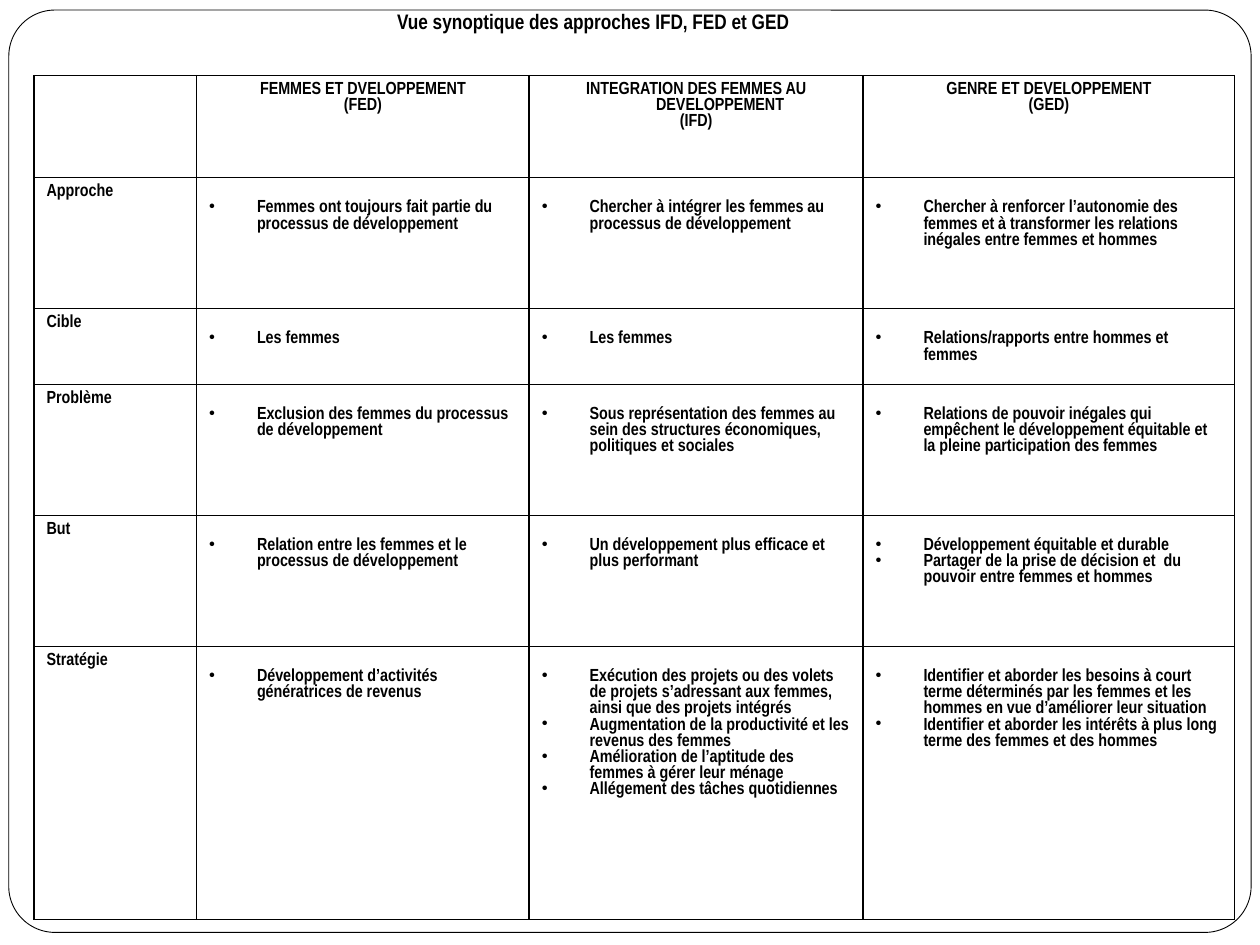
import pptx
import pptx.util
import pptx.dml.color
import pptx.enum.shapes
import pptx.enum.text
import pptx.oxml
import pptx.oxml.ns
import lxml.etree

Inches = pptx.util.Inches
Pt = pptx.util.Pt
BLACK = pptx.dml.color.RGBColor(0, 0, 0)
WHITE = pptx.dml.color.RGBColor(255, 255, 255)
FONT = "Arial Narrow"
HANGING = Inches(0.38)
COLUMN_WIDTHS = (1.29, 2.64, 2.65, 2.95)
ROW_HEIGHTS = (0.81, 1.04, 0.6, 1.04, 1.04, 2.17)

APPROACHES = [
    ["FEMMES ET DVELOPPEMENT", "(FED)"],
    ["INTEGRATION DES FEMMES AU DEVELOPPEMENT", "(IFD)"],
    ["GENRE ET DEVELOPPEMENT", "(GED)"],
]
CRITERIA = [
    ("Approche",
     ["Femmes ont toujours fait partie du processus de développement"],
     ["Chercher à intégrer les femmes au processus de développement"],
     ["Chercher à renforcer l’autonomie des femmes et à transformer les "
      "relations inégales entre femmes et hommes"]),
    ("Cible",
     ["Les femmes"],
     ["Les femmes"],
     ["Relations/rapports entre hommes et femmes"]),
    ("Problème",
     ["Exclusion des femmes du processus de développement"],
     ["Sous représentation des femmes au sein des structures économiques,  "
      "politiques et sociales"],
     ["Relations de pouvoir inégales qui empêchent le développement "
      "équitable et la pleine participation des femmes"]),
    ("But",
     ["Relation entre les femmes et le processus de développement"],
     ["Un développement plus efficace et plus performant"],
     ["Développement équitable et durable",
      "Partager de la prise de décision et  du pouvoir entre femmes et hommes"]),
    ("Stratégie",
     ["Développement d’activités génératrices de revenus"],
     ["Exécution des projets ou des volets de projets s’adressant aux femmes, "
      "ainsi que des projets intégrés",
      "Augmentation de la productivité et les revenus des femmes",
      "Amélioration de l’aptitude des femmes à gérer leur ménage",
      "Allégement des tâches quotidiennes"],
     ["Identifier et aborder les besoins à court terme déterminés par les "
      "femmes et les hommes en vue d’améliorer leur situation",
      "Identifier et aborder les intérêts à plus long terme des femmes et "
      "des hommes"]),
]


def style_font(paragraph, size):
    font = paragraph.font
    font.name, font.size, font.bold = FONT, Pt(size), True
    font.color.rgb = BLACK


def add_frame(slide, left, top, width, height):
    frame = slide.shapes.add_shape(
        pptx.enum.shapes.MSO_SHAPE.ROUNDED_RECTANGLE, left, top, width, height)
    frame.adjustments[0] = 0.05
    frame.shadow.inherit = False
    frame.fill.solid()
    frame.fill.fore_color.rgb = WHITE
    frame.line.color.rgb = BLACK
    frame.line.width = Pt(0.5)


def add_title(slide, left, top, width, height):
    title = slide.shapes.add_textbox(left, top, width, height).text_frame
    title.word_wrap = False
    title.margin_top = Inches(0.07)
    title.text = "Vue synoptique des approches IFD, FED et GED"
    title.paragraphs[0].alignment = pptx.enum.text.PP_ALIGN.CENTER
    style_font(title.paragraphs[0], 12)


def outline_cell(cell):
    properties = cell._tc.get_or_add_tcPr()
    for side in ("lnL", "lnR", "lnT", "lnB"):
        properties.append(pptx.oxml.parse_xml(
            f'<a:{side} {pptx.oxml.ns.nsdecls("a")} w="{Pt(1)}"><a:solidFill>'
            f'<a:srgbClr val="{BLACK}"/></a:solidFill></a:{side}>'))
    cell.fill.background()


def fill_cell(cell, lines, centered=False, bulleted=False):
    outline_cell(cell)
    if bulleted:
        cell.margin_top = Inches(0.18)
    cell.text = "\n".join(lines)
    for paragraph in cell.text_frame.paragraphs:
        style_font(paragraph, 10)
        if centered:
            paragraph.alignment = pptx.enum.text.PP_ALIGN.CENTER
        properties = paragraph._p.get_or_add_pPr()
        properties.set("marL", str(HANGING))
        properties.set("indent", str(-HANGING))
        if bulleted:
            bullet = lxml.etree.Element(pptx.oxml.ns.qn("a:buChar"), char="•")
            properties.insert(0, bullet)


def add_comparison(slide, left, top, width, height):
    table = slide.shapes.add_table(
        len(ROW_HEIGHTS), len(COLUMN_WIDTHS), left, top, width, height).table
    table.first_row = table.horz_banding = False
    for column, column_width in zip(table.columns, COLUMN_WIDTHS):
        column.width = Inches(column_width)
    for row, row_height in zip(table.rows, ROW_HEIGHTS):
        row.height = Inches(row_height)

    outline_cell(table.cell(0, 0))
    for column, heading in enumerate(APPROACHES, 1):
        fill_cell(table.cell(0, column), heading, centered=True)
    for row, (criterion, *answers) in enumerate(CRITERIA, 1):
        fill_cell(table.cell(row, 0), [criterion])
        for column, points in enumerate(answers, 1):
            fill_cell(table.cell(row, column), points, bulleted=True)


def main():
    deck = pptx.Presentation()
    deck.slide_width, deck.slide_height = Inches(10), Inches(7.5)
    slide = deck.slides.add_slide(deck.slide_layouts[6])
    add_frame(slide, Inches(0.07), Inches(0.08), Inches(9.86), Inches(7.32))
    add_title(slide, Inches(3.03), Inches(0), Inches(3.36), Inches(0.6))
    add_comparison(slide, Inches(0.27), Inches(0.6),
                   Inches(sum(COLUMN_WIDTHS)), Inches(sum(ROW_HEIGHTS)))
    deck.save("out.pptx")


if __name__ == "__main__":
    main()
